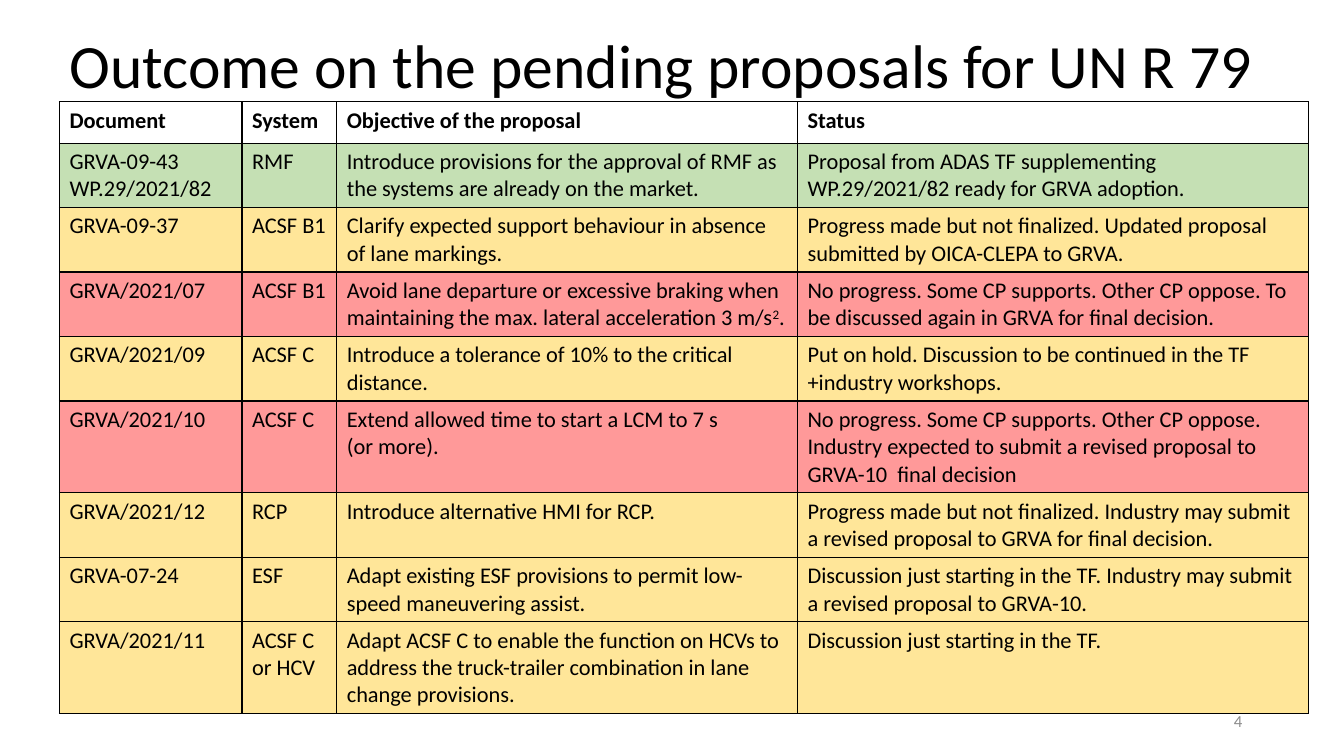
"""Build the slide on the outcome of the pending proposals for UN R 79."""
from lxml.etree import SubElement
from pptx import Presentation
from pptx.dml.color import RGBColor
from pptx.enum.text import MSO_ANCHOR as Anchor, PP_ALIGN as Align
from pptx.oxml.ns import qn
from pptx.util import Inches, Pt


def color(hex_code):
    """Turn a hex string into a colour."""
    return RGBColor.from_string(hex_code)


def write(frame, text, size=16, bold=False, ink="000000", align=Align.LEFT,
          anchor=Anchor.TOP, spacing=1.0):
    """Write one paragraph per line, raising the parts between carets."""
    frame.word_wrap = True
    frame.vertical_anchor = anchor
    for index, line in enumerate(text.split("\n")):
        paragraph = frame.add_paragraph() if index else frame.paragraphs[0]
        paragraph.alignment = align
        paragraph.line_spacing = spacing
        first, *others = line.split("^")
        paragraph.text = first
        for part in others:
            paragraph.add_run().text = part
        for run in paragraph.runs:
            run.font.name = "Calibri"
            run.font.size = Pt(size)
            run.font.bold = bold
            run.font.color.rgb = color(ink)
        if others:
            for run in paragraph.runs[1::2]:
                run.font._element.set("baseline", "30000")


WHITE, READY, ONGOING, BLOCKED = "FFFFFF", "C5E0B4", "FFE699", "FF9999"
COLUMN_WIDTHS = [1.81, 0.94, 4.57, 5.07]
ROW_HEIGHTS = {1: 0.41, 2: 0.64, 3: 0.91}
PROPOSALS = [
    (WHITE, 1, "Document", "System", "Objective of the proposal", "Status"),
    (READY, 2, "GRVA-09-43\nWP.29/2021/82", "RMF",
     "Introduce provisions for the approval of RMF as the systems are already on the market.",
     "Proposal from ADAS TF supplementing WP.29/2021/82 ready for GRVA adoption."),
    (ONGOING, 2, "GRVA-09-37", "ACSF B1",
     "Clarify expected support behaviour in absence of lane markings.",
     "Progress made but not finalized. Updated proposal submitted by OICA-CLEPA to GRVA."),
    (BLOCKED, 2, "GRVA/2021/07", "ACSF B1",
     "Avoid lane departure or excessive braking when maintaining the max. "
     "lateral acceleration 3 m/s^2^.",
     "No progress. Some CP supports. Other CP oppose. To be discussed again in GRVA "
     "for final decision."),
    (ONGOING, 2, "GRVA/2021/09", "ACSF C",
     "Introduce a tolerance of 10% to the critical distance.",
     "Put on hold. Discussion to be continued in the TF +industry workshops."),
    (BLOCKED, 3, "GRVA/2021/10", "ACSF C",
     "Extend allowed time to start a LCM to 7 s\v(or more).",
     "No progress. Some CP supports. Other CP oppose. Industry expected to submit "
     "a revised proposal to GRVA-10  final decision"),
    (ONGOING, 2, "GRVA/2021/12", "RCP", "Introduce alternative HMI for RCP.",
     "Progress made but not finalized. Industry may submit a revised proposal to GRVA "
     "for final decision."),
    (ONGOING, 2, "GRVA-07-24", "ESF",
     "Adapt existing ESF provisions to permit low-speed maneuvering assist.",
     "Discussion just starting in the TF. Industry may submit a revised proposal to GRVA-10."),
    (ONGOING, 3, "GRVA/2021/11", "ACSF C\nor HCV",
     "Adapt ACSF C to enable the function on HCVs to address the truck-trailer "
     "combination in lane change provisions.",
     "Discussion just starting in the TF."),
]

presentation = Presentation()
presentation.slide_width = Inches(13.33)
presentation.slide_height = Inches(7.5)
slide = presentation.slides.add_slide(presentation.slide_layouts[6])

title = slide.shapes.add_textbox(Inches(0.59), Inches(0.28), Inches(12.09), Inches(0.79))
write(title.text_frame, "Outcome on the pending proposals for UN R 79", size=44,
      anchor=Anchor.MIDDLE, spacing=0.9)
page_number = slide.shapes.add_textbox(Inches(9.42), Inches(6.95), Inches(3), Inches(0.4))
write(page_number.text_frame, "4", size=12, ink="8C8C8C", align=Align.RIGHT,
      anchor=Anchor.MIDDLE)

table = slide.shapes.add_table(
    len(PROPOSALS), len(COLUMN_WIDTHS), Inches(0.59), Inches(1.01), Inches(12.39),
    Inches(sum(ROW_HEIGHTS[proposal[1]] for proposal in PROPOSALS))).table
for column, width in zip(table.columns, COLUMN_WIDTHS):
    column.width = Inches(width)

for row, (fill, line_count, *texts) in zip(table.rows, PROPOSALS):
    row.height = Inches(ROW_HEIGHTS[line_count])
    for cell, text in zip(row.cells, texts):
        write(cell.text_frame, text, bold=fill == WHITE)
        properties = cell._tc.get_or_add_tcPr()
        for side in ("a:lnL", "a:lnR", "a:lnT", "a:lnB"):
            border = SubElement(properties, qn(side), w=str(Pt(1)))
            border_fill = SubElement(border, qn("a:solidFill"))
            SubElement(border_fill, qn("a:srgbClr"), val="000000")
        cell.fill.solid()
        cell.fill.fore_color.rgb = color(fill)

presentation.save("out.pptx")
